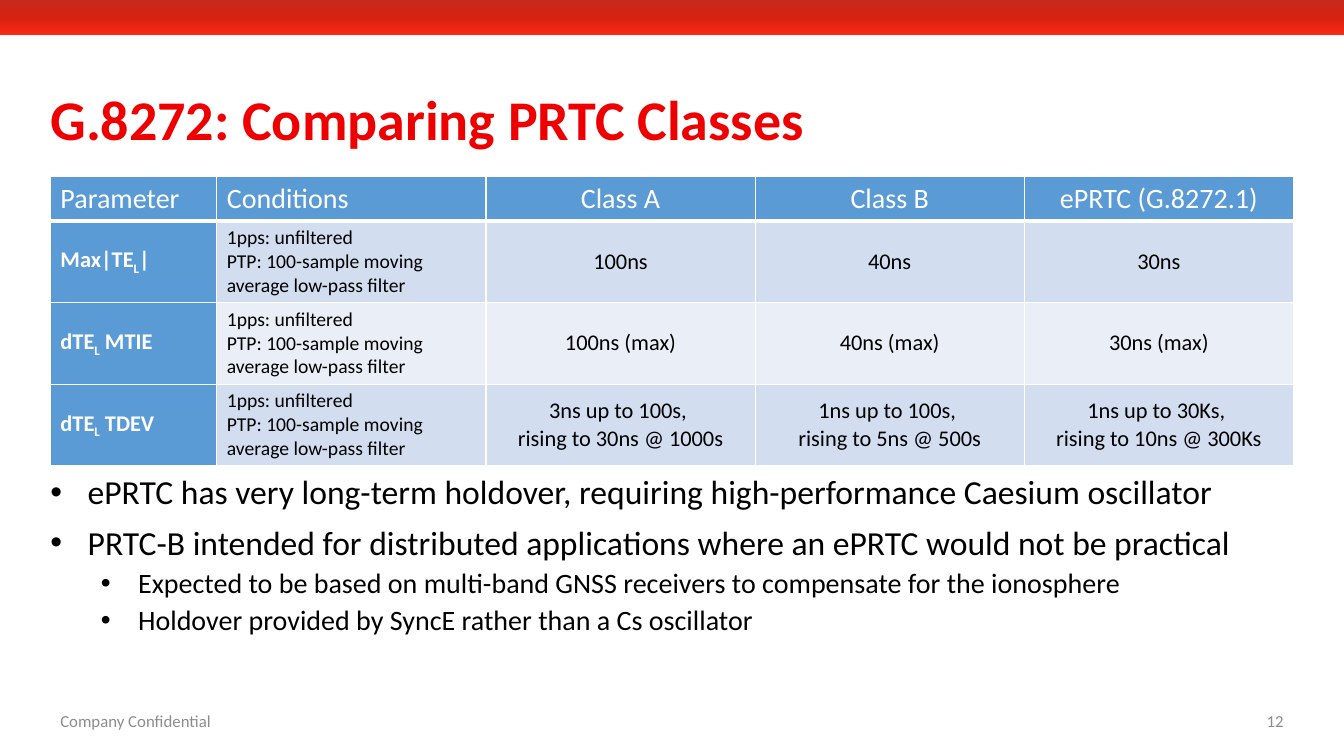
from copy import deepcopy
from dataclasses import dataclass

from lxml.etree import SubElement
from pptx import Presentation
from pptx.dml.color import RGBColor
from pptx.enum.shapes import MSO_SHAPE as Shape
from pptx.enum.text import MSO_ANCHOR as Anchor, MSO_AUTO_SIZE as AutoSize, PP_ALIGN as Align
from pptx.oxml.ns import qn
from pptx.util import Inches, Pt

COLOURS = {
    "title": "EE0000", "text": "000000", "white": "FFFFFF", "footer": "8C8C8C",
    "head": "5B9BD5", "odd": "D2DEEF", "even": "EAEFF7",
}
BANNER_STOPS = ((0, "C52A1D"), (0.5, "D52212"), (1, "FD2815"))
LEFT, WIDTH = 0.5, 12.33
CONDITIONS = "1pps: unfiltered\nPTP: 100-sample moving average low-pass filter"


@dataclass
class Metric:
    before: str
    after: str
    limits: tuple[str, str, str]


@dataclass
class Bullet:
    text: str
    level: int = 0


@dataclass
class Footer:
    text: str
    left: float
    align: Align


HEADINGS = ("Parameter", "Conditions", "Class A", "Class B", "ePRTC (G.8272.1)")
METRICS = (
    Metric("Max|TE", "|", ("100ns", "40ns", "30ns")),
    Metric("dTE", " MTIE", ("100ns (max)", "40ns (max)", "30ns (max)")),
    Metric("dTE", " TDEV", ("3ns up to 100s, \nrising to 30ns @ 1000s",
                            "1ns up to 100s, \nrising to 5ns @ 500s",
                            "1ns up to 30Ks, \nrising to 10ns @ 300Ks")),
)
BULLETS = (
    Bullet("ePRTC has very long-term holdover, requiring high-performance Caesium oscillator"),
    Bullet("PRTC-B intended for distributed applications where an ePRTC would not be practical"),
    Bullet("Expected to be based on multi-band GNSS receivers to compensate for the ionosphere", 1),
    Bullet("Holdover provided by SyncE rather than a Cs oscillator", 1),
)
FOOTERS = (
    Footer("Company Confidential", LEFT, Align.LEFT),
    Footer("12", 9.83, Align.RIGHT),
)


def rgb(name: str) -> RGBColor:
    return RGBColor.from_string(COLOURS[name])


def add_text(para, text: str, *, size: float, colour: str = "text", bold: bool = False,
             align: Align = Align.LEFT, baseline: int = 0) -> None:
    para.alignment = align
    for index, line in enumerate(text.split("\n")):
        if index:
            para.add_line_break()
        span = para.add_run()
        span.text = line
        span.font.name = "Calibri"
        span.font.size = Pt(size)
        span.font.bold = bold
        span.font.color.rgb = rgb(colour)
        if baseline:
            span.font._element.set("baseline", str(baseline * 1000))


def clear_insets(frame) -> None:
    frame.margin_left = frame.margin_right = frame.margin_top = frame.margin_bottom = 0


def style_cell(cell, fill: str, bottom: float = 1) -> None:
    properties = cell._tc.get_or_add_tcPr()
    for side, width in (("L", 1), ("R", 1), ("T", 1), ("B", bottom)):
        line = SubElement(properties, qn(f"a:ln{side}"), w=str(Pt(width)))
        solid = SubElement(line, qn("a:solidFill"))
        SubElement(solid, qn("a:srgbClr"), val=COLOURS["white"])
    cell.fill.solid()
    cell.fill.fore_color.rgb = rgb(fill)


def draw_banner(page) -> None:
    banner = page.shapes.add_shape(Shape.RECTANGLE, 0, Inches(-0.01), Inches(13.34), Inches(0.36))
    banner.shadow.inherit = False
    banner.line.fill.background()
    banner.fill.gradient()
    banner.fill.gradient_angle = 270
    stop_list = banner._element.spPr.find(f".//{qn('a:gsLst')}")
    stop_list.append(deepcopy(stop_list[0]))
    for stop, (position, colour) in zip(banner.fill.gradient_stops, BANNER_STOPS):
        stop.position = position
        stop.color.rgb = RGBColor.from_string(colour)


def draw_title(page, text: str) -> None:
    title = page.shapes.title
    title.left, title.top = Inches(LEFT), Inches(0.91)
    title.width, title.height = Inches(11.47), Inches(0.61)
    frame = title.text_frame
    clear_insets(frame)
    frame.auto_size = AutoSize.NONE
    frame.vertical_anchor = Anchor.MIDDLE
    para = frame.paragraphs[0]
    para.line_spacing = 0.9
    add_text(para, text, size=40, colour="title", bold=True)


def draw_table(page) -> None:
    table = page.shapes.add_table(len(METRICS) + 1, len(HEADINGS), Inches(LEFT), Inches(1.75),
                                  Inches(WIDTH), Inches(2.86)).table
    for index, column in enumerate(table.columns):
        column.width = Inches(2.67 if index else 1.65)
    for index, row in enumerate(table.rows):
        row.height = Inches(0.81 if index else 0.43)

    # Heading row
    for index, heading in enumerate(HEADINGS):
        cell = table.cell(0, index)
        style_cell(cell, "head", bottom=3)
        add_text(cell.text_frame.paragraphs[0], heading, size=20, colour="white",
                 align=Align.CENTER if index > 1 else Align.LEFT)

    # One row per metric
    for number, metric in enumerate(METRICS, start=1):
        band = "odd" if number % 2 else "even"
        cells = [table.cell(number, index) for index in range(len(HEADINGS))]
        for index, cell in enumerate(cells):
            style_cell(cell, band if index else "head")
            cell.vertical_anchor = Anchor.MIDDLE
        paras = [cell.text_frame.paragraphs[0] for cell in cells]
        for part, baseline in ((metric.before, 0), ("L", -25), (metric.after, 0)):
            add_text(paras[0], part, size=16, colour="white", bold=True, baseline=baseline)
        add_text(paras[1], CONDITIONS, size=14)
        for para, limit in zip(paras[2:], metric.limits):
            add_text(para, limit, size=16, align=Align.CENTER)


def draw_bullets(page) -> None:
    box = page.shapes.add_textbox(Inches(LEFT), Inches(4.72), Inches(WIDTH), Inches(2.08))
    frame = box.text_frame
    frame.word_wrap = True
    clear_insets(frame)
    for index, bullet in enumerate(BULLETS):
        para = frame.add_paragraph() if index else frame.paragraphs[0]
        properties = para._p.get_or_add_pPr()
        properties.set("marL", str(Inches(0.37 + 0.5 * bullet.level)))
        properties.set("indent", str(Inches(-0.37)))
        SubElement(properties, qn("a:buFont"), typeface="Arial")
        SubElement(properties, qn("a:buChar"), char="•")
        para.level = bullet.level
        para.line_spacing = 0.9
        para.space_before = Pt((5 if bullet.level else 10) if index else 0)
        add_text(para, bullet.text, size=20 if bullet.level else 24)


def draw_footer(page, footer: Footer) -> None:
    box = page.shapes.add_textbox(Inches(footer.left), Inches(6.95), Inches(3), Inches(0.4))
    frame = box.text_frame
    frame.word_wrap = True
    frame.vertical_anchor = Anchor.MIDDLE
    add_text(frame.paragraphs[0], footer.text, size=12, colour="footer", align=footer.align)


def main() -> None:
    deck = Presentation()
    deck.slide_width, deck.slide_height = Inches(13.33), Inches(7.5)
    page = deck.slides.add_slide(deck.slide_layouts[5])
    draw_banner(page)
    draw_title(page, "G.8272: Comparing PRTC Classes")
    draw_table(page)
    draw_bullets(page)
    for footer in FOOTERS:
        draw_footer(page, footer)
    deck.save("out.pptx")


if __name__ == "__main__":
    main()
